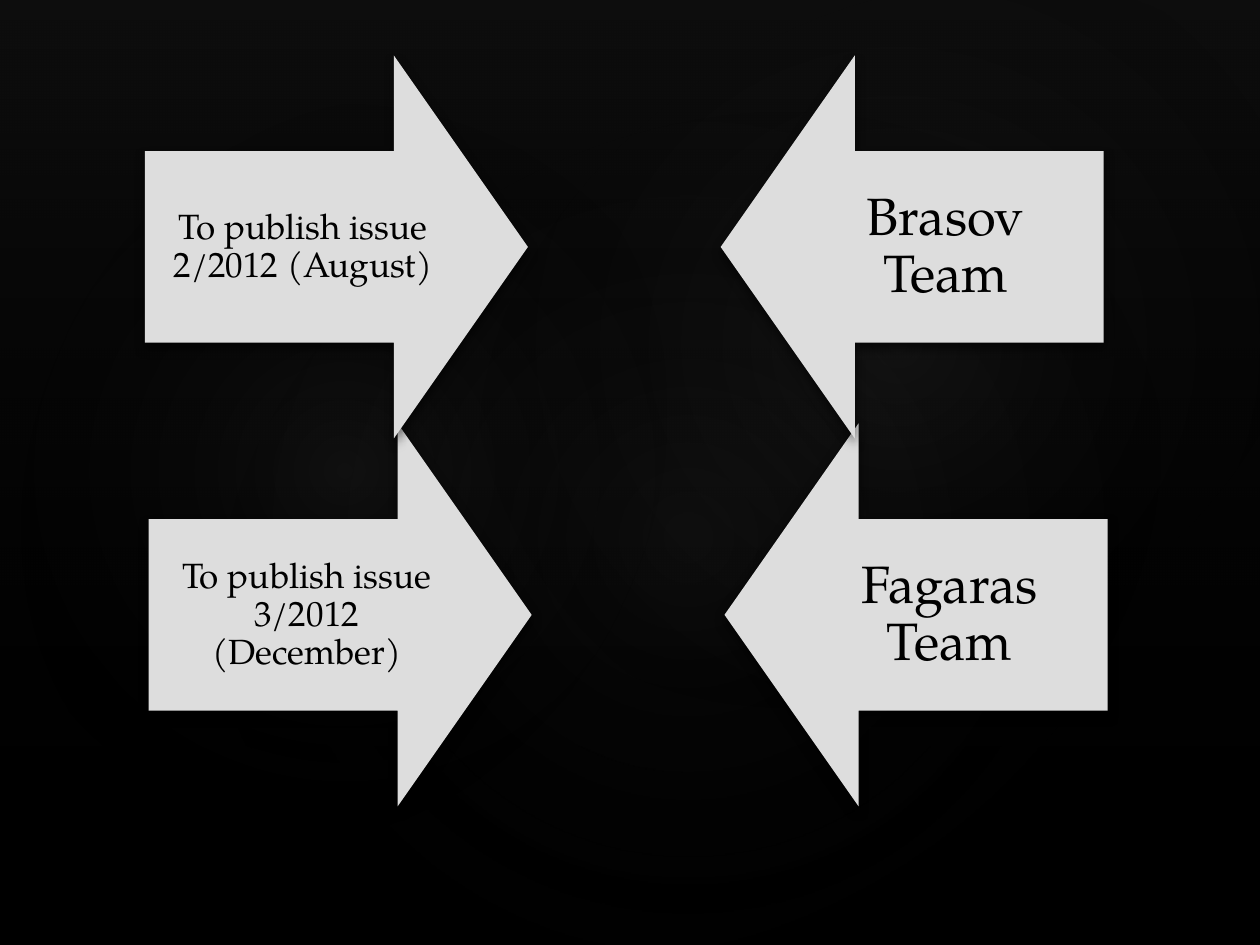
from lxml.etree import SubElement
from pptx import Presentation
from pptx.dml.color import RGBColor
from pptx.enum.shapes import MSO_SHAPE as SHAPE
from pptx.enum.text import MSO_ANCHOR as ANCHOR, PP_ALIGN as ALIGN
from pptx.oxml import parse_xml
from pptx.oxml.ns import nsdecls, qn
from pptx.util import Inches, Pt

FONT = "TeX Gyre Pagella"
SIDE = 3.04
GLOWS = [
    (1.5, 1.14, 7.92, 6.24, 328.7, 7),
    (-0.3, 1.28, 6.06, 4.9, 294.3, 8),
    (3.58, 0.13, 7.09, 5.2, 328.7, 8),
]
ROWS = [
    (1.18, 3.36, "To publish issue 3/2012 (December)", "Fagaras Team"),
    (1.15, 0.44, "To publish issue 2/2012 (August)", "Brasov Team"),
]


def rgb(color):
    """Turn a hex string into a colour."""
    return RGBColor.from_string(color)


def add_text(tf, text, size=20, color="000000", font=FONT, align=ALIGN.CENTER):
    """Write formatted text into the first paragraph of a frame."""
    p = tf.paragraphs[0]
    p.alignment, p.line_spacing = align, 0.9
    r = p.add_run()
    r.text = text
    r.font.name, r.font.size = font, Pt(size)
    r.font.color.rgb = rgb(color)


class Deck:
    """Hold the style and the current slide."""

    def __init__(self, arrow="DDDDDD", background="000000"):
        """Start a slide with a plain background."""
        self.prs = Presentation()
        self.prs.slide_width, self.prs.slide_height = Inches(10), Inches(7.5)
        self.s = self.prs.slides.add_slide(self.prs.slide_layouts[6])
        self.s.background.fill.solid()
        self.s.background.fill.fore_color.rgb = rgb(background)
        self.arrow_color = arrow

    def shape(self, kind, x, y, w, h, rotation=0):
        """Add a preset shape without outline or fill."""
        sp = self.s.shapes.add_shape(kind, Inches(x), Inches(y), Inches(w), Inches(h))
        sp.rotation = rotation
        sp.shadow.inherit = False
        sp.fill.background()
        sp.line.fill.background()
        return sp

    def gradient(self, sp, stops, shade):
        """Fill a shape with a see-through gradient."""
        marks = "".join(
            f'<a:gs pos="{pos * 1000}"><a:srgbClr val="{color}">'
            f'<a:alpha val="{alpha * 1000}"/></a:srgbClr></a:gs>'
            for pos, color, alpha in stops
        )
        fill = parse_xml(
            f'<a:gradFill {nsdecls("a")} rotWithShape="1"><a:gsLst>{marks}</a:gsLst>{shade}</a:gradFill>'
        )
        props = sp._element.spPr
        props.replace(props.find(qn("a:noFill")), fill)

    def veil(self):
        """Shade the whole slide from top to bottom."""
        sp = self.shape(SHAPE.RECTANGLE, 0, 0, 10, 7.5)
        self.gradient(sp, [(0, "262626", 36), (100, "000000", 10)], '<a:lin ang="5400000" scaled="0"/>')

    def glow(self, x, y, w, h, rotation, alpha):
        """Add a soft round light."""
        sp = self.shape(SHAPE.OVAL, x, y, w, h, rotation)
        shade = '<a:path path="circle"><a:fillToRect l="50000" t="50000" r="50000" b="50000"/></a:path>'
        self.gradient(sp, [(0, "949494", alpha), (58, "000000", 0)], shade)

    def arrow(self, x, y, rotation):
        """Add a square block arrow with a soft shadow."""
        sp = self.shape(SHAPE.DOWN_ARROW, x, y, SIDE, SIDE, rotation)
        sp.adjustments[0], sp.adjustments[1] = 0.5, 0.35
        sp.fill.solid()
        sp.fill.fore_color.rgb = rgb(self.arrow_color)
        effects = sp._element.spPr.find(qn("a:effectLst"))
        shadow = SubElement(effects, qn("a:outerShdw"), blurRad=str(Pt(6)),
                            dist=str(Pt(3)), dir="5400000", rotWithShape="0")
        color = SubElement(shadow, qn("a:srgbClr"), val="000000")
        SubElement(color, qn("a:alpha"), val="60000")

    def label(self, x, y, text, size, inset):
        """Add centred text over the shaft of an arrow."""
        tf = self.s.shapes.add_textbox(Inches(x), Inches(y), Inches(2.51), Inches(SIDE / 2)).text_frame
        tf.word_wrap, tf.vertical_anchor = True, ANCHOR.MIDDLE
        tf.margin_left = tf.margin_right = tf.margin_top = tf.margin_bottom = Inches(inset)
        add_text(tf, text, size=size)


def main():
    """Build and save the slide."""
    deck = Deck()
    deck.veil()
    for glow in GLOWS:
        deck.glow(*glow)
    for x, y, goal, team in ROWS:
        deck.arrow(x, y, 270)
        deck.label(x, y + SIDE / 4, goal, 20, 0.16)
        deck.arrow(x + 4.57, y, 90)
        deck.label(x + 5.1, y + SIDE / 4, team, 30, 0.23)
    deck.prs.save("out.pptx")


if __name__ == "__main__":
    main()
